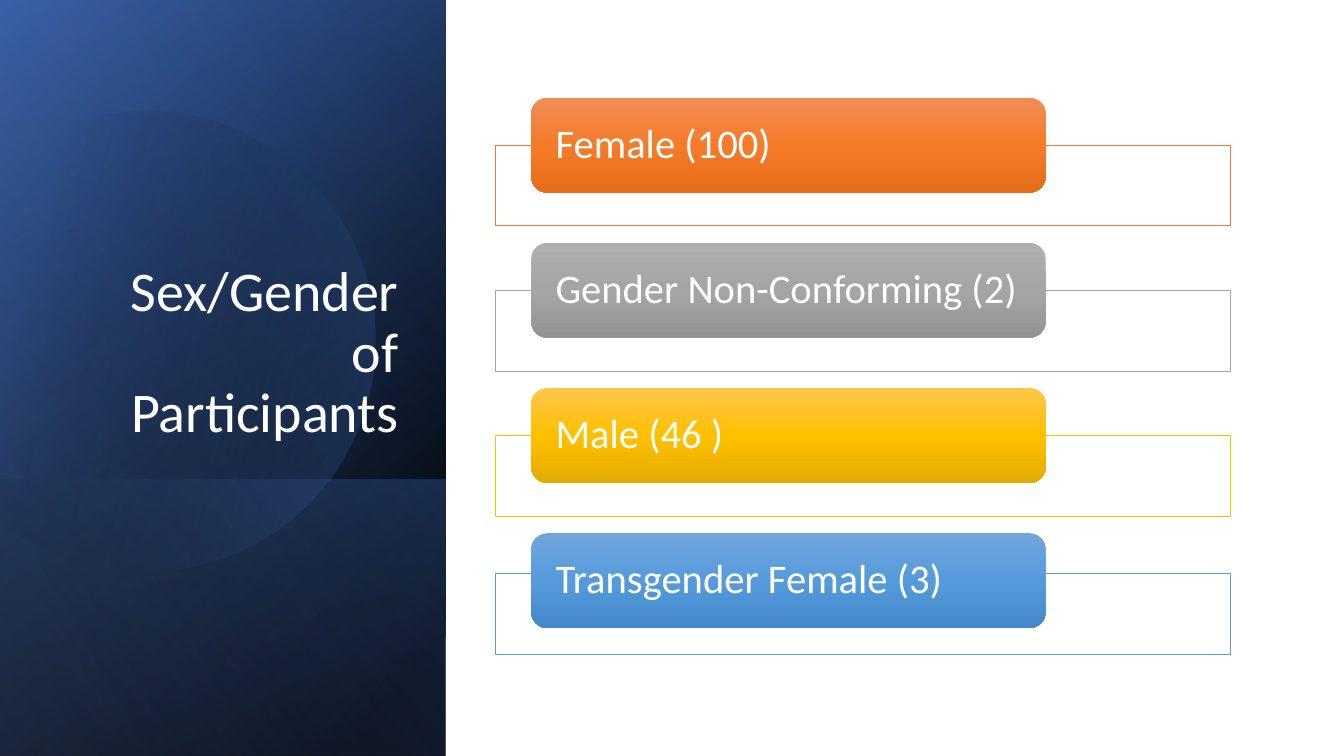
import math
from typing import NamedTuple

from pptx import Presentation
from pptx import util as u
from pptx.dml.color import RGBColor
from pptx.enum import shapes, text
from pptx.oxml import parse_xml
from pptx.oxml.ns import nsdecls, qn

PX = 9144  # EMU per px, 100 px to the inch
FONT = "Calibri"
WHITE = "FFFFFF"
BAR_LEFT, BAR_TOP, BAR_WIDTH, BAR_HEIGHT = 527, 97, 510, 94
BAR_PITCH = 144
LABEL_INSET = 5
FRAME_LEFT, FRAME_WIDTH, FRAME_HEIGHT = 491, 729, 80


class Stop(NamedTuple):
    position: int
    color: str
    opacity: int = 100


class Panel(NamedTuple):
    left: int
    top: int
    width: int
    height: int
    angle: int
    stops: list[Stop]


class Group(NamedTuple):
    label: str
    line: str
    shades: tuple[str, str, str]
    frame_drop: int = 47


SIDE = (-154, 154, 750, 442)
PANELS = [
    Panel(*SIDE, 50, [Stop(8, "000000"), Stop(100, "2F5597")]),
    Panel(*SIDE, 30, [Stop(0, "000000", 0), Stop(99, "4472C4", 46)]),
    Panel(84, 392, 274, 442, 130, [Stop(2, "4472C4", 29), Stop(100, "000000", 30)]),
]
GLOSS = Panel(*SIDE, 120, [Stop(0, "000000", 0), Stop(99, "8FAADC", 11)])

DISC = Panel(-55, 106, 427, 457, 30, [Stop(29, "000000", 0), Stop(100, "4472C4", 43)])
DISC_TILT = -16.1
DISC_START = (149, 110)
# One point ends a straight piece; three points are a curve's controls and end.
DISC_PIECES = [
    [(246, 112), (335, 177), (363, 275)],
    [(398, 397), (328, 523), (207, 558)],
    [(131, 580), (53, 561), (-3, 514)],
    [(-15, 503)],
    [(-15, 175)],
    [(0, 161)],
    [(23, 142), (50, 128), (80, 119)],
    [(103, 113), (126, 110), (149, 110)],
]

GROUPS = [
    Group("Female (100)", "ED7D31", ("F18C57", "F67B28", "E56C19")),
    Group("Gender Non-Conforming (2)", "A5A5A5", ("AFAFAF", "A5A5A5", "939393")),
    Group("Male (46 )", "FFC000", ("FFC64B", "FFC000", "E3AB00")),
    Group("Transgender Female (3)", "5B9BD5", ("71A6DB", "559BDB", "448ACA"), 40),
]


def rgb(color: str) -> RGBColor:
    return RGBColor.from_string(color)


def fill_gradient(shape, angle: int, stops: list[Stop]) -> None:
    """Fill with a linear gradient whose stops may be translucent."""
    shape.fill.gradient()
    stop_xml = "".join(
        f'<a:gs pos="{s.position * 1000}"><a:srgbClr val="{s.color}">'
        f'<a:alpha val="{s.opacity * 1000}"/></a:srgbClr></a:gs>'
        for s in stops
    )
    gradient = parse_xml(
        f'<a:gradFill {nsdecls("a")} rotWithShape="1"><a:gsLst>{stop_xml}</a:gsLst>'
        f'<a:lin ang="{angle * 60000}" scaled="0"/></a:gradFill>'
    )
    properties = shape._element.spPr
    properties.replace(properties.find(qn("a:gradFill")), gradient)


def add_block(slide, kind, left: int, top: int, width: int, height: int):
    block = slide.shapes.add_shape(kind, left * PX, top * PX, width * PX, height * PX)
    block.shadow.inherit = False
    block.line.fill.background()
    return block


def add_panel(slide, panel: Panel) -> None:
    block = add_block(slide, shapes.MSO_SHAPE.RECTANGLE, *panel[:4])
    block.rotation = 90
    block._element.spPr.get_or_add_xfrm().set("flipH", "1")
    fill_gradient(block, panel.angle, panel.stops)


def disc_point(point: tuple[int, int]) -> str:
    """Give a slide point in the disc's own frame, before its rotation."""
    turn = math.radians(-DISC_TILT)
    dx = point[0] - DISC.left - DISC.width / 2
    dy = point[1] - DISC.top - DISC.height / 2
    x = DISC.width / 2 + dx * math.cos(turn) - dy * math.sin(turn)
    y = DISC.height / 2 + dx * math.sin(turn) + dy * math.cos(turn)
    return f'<a:pt x="{round(x * PX)}" y="{round(y * PX)}"/>'


def add_disc(slide) -> None:
    right, bottom = DISC.left + DISC.width, DISC.top + DISC.height
    builder = slide.shapes.build_freeform(DISC.left, DISC.top, scale=PX)
    builder.add_line_segments([(right, DISC.top), (right, bottom), (DISC.left, bottom)])
    disc = builder.convert_to_shape()

    pieces = [f"<a:moveTo>{disc_point(DISC_START)}</a:moveTo>"]
    for piece in DISC_PIECES:
        tag = "a:cubicBezTo" if len(piece) == 3 else "a:lnTo"
        pieces.append(f"<{tag}>{''.join(map(disc_point, piece))}</{tag}>")
    outline = parse_xml(
        f'<a:pathLst {nsdecls("a")}><a:path w="{DISC.width * PX}" h="{DISC.height * PX}">'
        f'{"".join(pieces)}<a:close/></a:path></a:pathLst>'
    )
    geometry = disc._element.spPr.find(qn("a:custGeom"))
    geometry.replace(geometry.find(qn("a:pathLst")), outline)

    disc.shadow.inherit = False
    disc.line.fill.background()
    disc.rotation = DISC_TILT
    fill_gradient(disc, DISC.angle, DISC.stops)


def add_text(slide, words: str, left: int, top: int, width: int, height: int,
             size: int, align, anchor):
    box = slide.shapes.add_textbox(left * PX, top * PX, width * PX, height * PX)
    frame = box.text_frame
    frame.word_wrap = True
    frame.vertical_anchor = anchor
    paragraph = frame.paragraphs[0]
    paragraph.text = words
    paragraph.alignment = align
    paragraph.line_spacing = 0.9
    paragraph.font.name = FONT
    paragraph.font.size = u.Pt(size)
    paragraph.font.color.rgb = rgb(WHITE)
    return frame


def add_group(slide, group: Group, top: int) -> None:
    frame = add_block(slide, shapes.MSO_SHAPE.RECTANGLE, FRAME_LEFT,
                      top + group.frame_drop, FRAME_WIDTH, FRAME_HEIGHT)
    frame.fill.solid()
    frame.fill.fore_color.rgb = rgb(WHITE)
    frame.line.color.rgb = rgb(group.line)
    frame.line.width = u.Pt(0.5)

    bar = add_block(slide, shapes.MSO_SHAPE.ROUNDED_RECTANGLE,
                    BAR_LEFT, top, BAR_WIDTH, BAR_HEIGHT)
    fill_gradient(bar, 90, [Stop(50 * i, shade) for i, shade in enumerate(group.shades)])

    label = add_text(slide, group.label, BAR_LEFT + LABEL_INSET, top + LABEL_INSET,
                     BAR_WIDTH - 2 * LABEL_INSET, BAR_HEIGHT - 2 * LABEL_INSET,
                     29, text.PP_ALIGN.LEFT, text.MSO_ANCHOR.MIDDLE)
    label.margin_left = label.margin_right = 19 * PX
    label.margin_top = label.margin_bottom = 0


def main() -> None:
    deck = Presentation()
    deck.slide_width, deck.slide_height = 1333 * PX, 750 * PX
    slide = deck.slides.add_slide(deck.slide_layouts[6])
    for panel in PANELS:
        add_panel(slide, panel)
    add_disc(slide)
    add_panel(slide, GLOSS)
    title = add_text(slide, "Sex/Gender of Participants", 64, 184, 341, 262,
                     40, text.PP_ALIGN.RIGHT, text.MSO_ANCHOR.BOTTOM)
    title.margin_left = 14 * PX
    for row, group in enumerate(GROUPS):
        add_group(slide, group, BAR_TOP + row * BAR_PITCH)
    deck.save("out.pptx")


if __name__ == "__main__":
    main()
